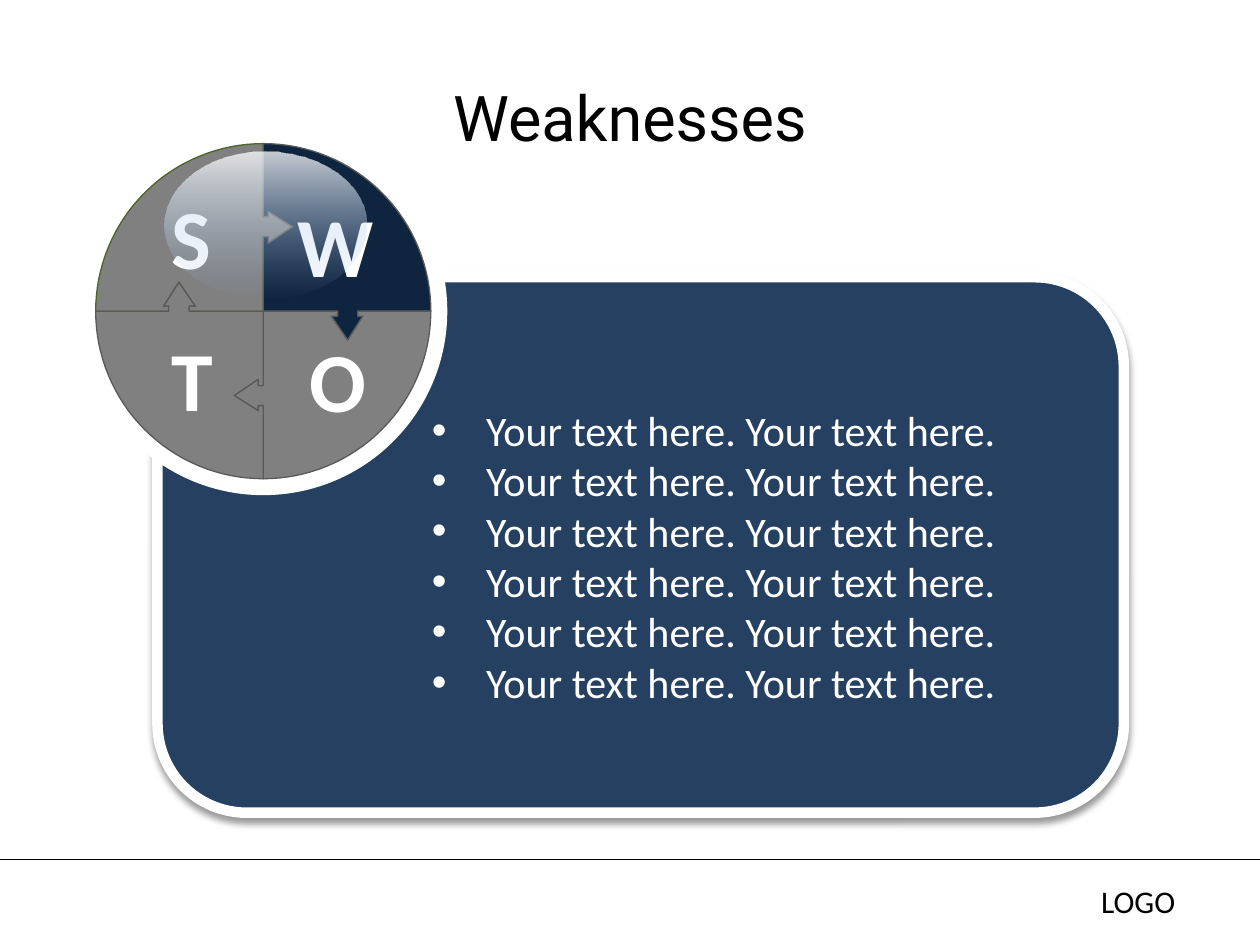
from math import cos, pi, sin

from lxml import etree
from pptx import Presentation
from pptx.dml.color import RGBColor
from pptx.enum.dml import MSO_THEME_COLOR
from pptx.enum.shapes import MSO_CONNECTOR, MSO_SHAPE
from pptx.enum.text import MSO_ANCHOR, MSO_AUTO_SIZE, PP_ALIGN
from pptx.oxml.ns import qn
from pptx.util import Inches, Pt

NAVY, DARK_NAVY, GRAY, WHITE, BLACK = "254061", "0F243E", "808080", "FFFFFF", "000000"


def rgb(hex_color):
    return RGBColor.from_string(hex_color)


def sub(parent, tag, **attributes):
    return etree.SubElement(parent, qn(tag), {k: str(v) for k, v in attributes.items()})


def add_run(paragraph, text, size, color, font="Calibri", bold=False):
    run = paragraph.add_run()
    run.text = text
    run.font.size, run.font.name, run.font.bold = Pt(size), font, bold
    run.font.color.rgb = rgb(color)


def add_text(shapes, box, lines, size, color, bold=False, bullet_indent=None):
    text_box = shapes.add_textbox(*map(Inches, box))
    frame = text_box.text_frame
    frame.word_wrap = True
    frame.auto_size = MSO_AUTO_SIZE.SHAPE_TO_FIT_TEXT
    for i, line in enumerate(lines):
        paragraph = frame.paragraphs[0] if i == 0 else frame.add_paragraph()
        add_run(paragraph, line, size, color, bold=bold)
        if bullet_indent:
            properties = paragraph._p.get_or_add_pPr()
            properties.set("marL", str(Inches(bullet_indent)))
            properties.set("indent", str(-Inches(bullet_indent)))
            sub(properties, "a:buFont", typeface="Arial")
            sub(properties, "a:buChar", char="•")


def add_plain(shapes, kind, box, fill):
    shape = shapes.add_shape(kind, *map(Inches, box))
    shape.shadow.inherit = False
    shape.fill.solid()
    shape.fill.fore_color.rgb = rgb(fill)
    shape.line.fill.background()
    return shape


def add_title(slide, box, text):
    title = slide.shapes.title
    title.left, title.top, title.width, title.height = map(Inches, box)
    title.text_frame.vertical_anchor = MSO_ANCHOR.MIDDLE
    paragraph = title.text_frame.paragraphs[0]
    paragraph.alignment = PP_ALIGN.CENTER
    add_run(paragraph, text, 36, BLACK, font="Roboto")


def add_footer(slide, top, width):
    rule = slide.shapes.add_connector(
        MSO_CONNECTOR.STRAIGHT, 0, Inches(top), Inches(width), Inches(top))
    rule.line.color.rgb = rgb(BLACK)
    rule.line.width = Pt(0.75)
    sub(rule._element.spPr, "a:effectLst")
    add_text(slide.shapes, (width - 1.36, top + 0.13, 1.11, 0.4), ["LOGO"], 18, BLACK)


def add_panel(slide, box):
    panel = add_plain(slide.shapes, MSO_SHAPE.ROUNDED_RECTANGLE, box, NAVY)
    panel.line.color.rgb = rgb(WHITE)
    panel.line.width = Pt(6)
    # Soft shadow straight below the panel
    effects = panel._element.spPr.find(qn("a:effectLst"))
    shadow = sub(effects, "a:outerShdw", blurRad=Pt(4), dist=Pt(3),
                 dir=90 * 60000, algn="t", rotWithShape=0)
    sub(sub(shadow, "a:srgbClr", val=BLACK), "a:alpha", val=40000)


def add_bullets(slide, panel_box):
    left, top = panel_box[:2]
    add_text(slide.shapes, (left + 2.08, top + 0.96, 5.08, 2.52),
             ["Your text here. Your text here."] * 6, 24, WHITE, bullet_indent=0.43)


def turn(points, quarters):
    """Rotate points clockwise about the wheel centre."""
    for _ in range(quarters):
        points = [(-y, x) for x, y in points]
    return points


def quadrant_outline(radius):
    """Upper left quarter: an arrow juts out on one edge and notches the other."""
    arrow = [(0, -0.59), (0.04, -0.59), (0.04, -0.54), (0.23, -0.67),
             (0.04, -0.79), (0.04, -0.75), (0, -0.75)]
    steps = 32
    angles = [pi / 2 * (1 + i / steps) for i in range(steps + 1)]
    arc = [(radius * cos(a), -radius * sin(a)) for a in angles]
    return [(0, 0)] + arrow + arc + turn(arrow, 3)[::-1]


def add_gloss(shapes, box):
    gloss = add_plain(shapes, MSO_SHAPE.OVAL, box, WHITE)
    gloss.fill.gradient()
    gloss.fill.gradient_angle = 270
    stops = ((0, WHITE, 77), (1, "8EB4E3", 0))
    for stop, (position, color, opacity) in zip(gloss.fill.gradient_stops, stops):
        stop.color.theme_color = MSO_THEME_COLOR.ACCENT_1
        stop.color.rgb = rgb(color)
        stop.position = position
        color_element = stop._gs.find(qn("a:srgbClr"))
        sub(color_element, "a:alpha", val=opacity * 1000)


def add_swot_wheel(slide, box):
    left, top, size, _ = box
    center_x, center_y = left + size / 2, top + size / 2
    shapes = slide.shapes.add_group_shape().shapes
    add_plain(shapes, MSO_SHAPE.OVAL, box, WHITE)

    # Quadrants, clockwise from Strengths
    outline = quadrant_outline(1.33)
    quadrants = ((GRAY, "4F6228"), (DARK_NAVY, "595959"), (GRAY, "595959"), (GRAY, "595959"))
    for quarter, (fill, edge) in enumerate(quadrants):
        points = [(Inches(center_x + x), Inches(center_y + y))
                  for x, y in turn(outline, quarter)]
        builder = shapes.build_freeform(*points[0])
        builder.add_line_segments(points[1:], close=True)
        quadrant = builder.convert_to_shape()
        quadrant.shadow.inherit = False
        quadrant.fill.solid()
        quadrant.fill.fore_color.rgb = rgb(fill)
        quadrant.line.color.rgb = rgb(edge)
        quadrant.line.width = Pt(0)

    # Letters
    letters = (("S", 0.63, 0.41, 0.41), ("W", 1.63, 0.48, 0.84),
               ("O", 1.73, 1.55, 0.66), ("T", 0.63, 1.54, 0.54))
    for letter, dx, dy, width in letters:
        add_text(shapes, (left + dx, top + dy, width, 0.91), [letter], 48, WHITE, bold=True)

    add_gloss(shapes, (left + 0.68, top + 0.19, 1.6, 1.17))


def main():
    presentation = Presentation()
    presentation.slide_width, presentation.slide_height = Inches(10), Inches(7.5)
    slide = presentation.slides.add_slide(presentation.slide_layouts[5])
    panel_box = (1.25, 2.2, 7.67, 4.25)

    add_footer(slide, 6.82, 10)
    add_panel(slide, panel_box)
    add_title(slide, (0.5, 0.3, 9, 1.25), "Weaknesses")
    add_swot_wheel(slide, (0.63, 1.01, 2.92, 2.92))
    add_bullets(slide, panel_box)
    presentation.save("out.pptx")


if __name__ == "__main__":
    main()
